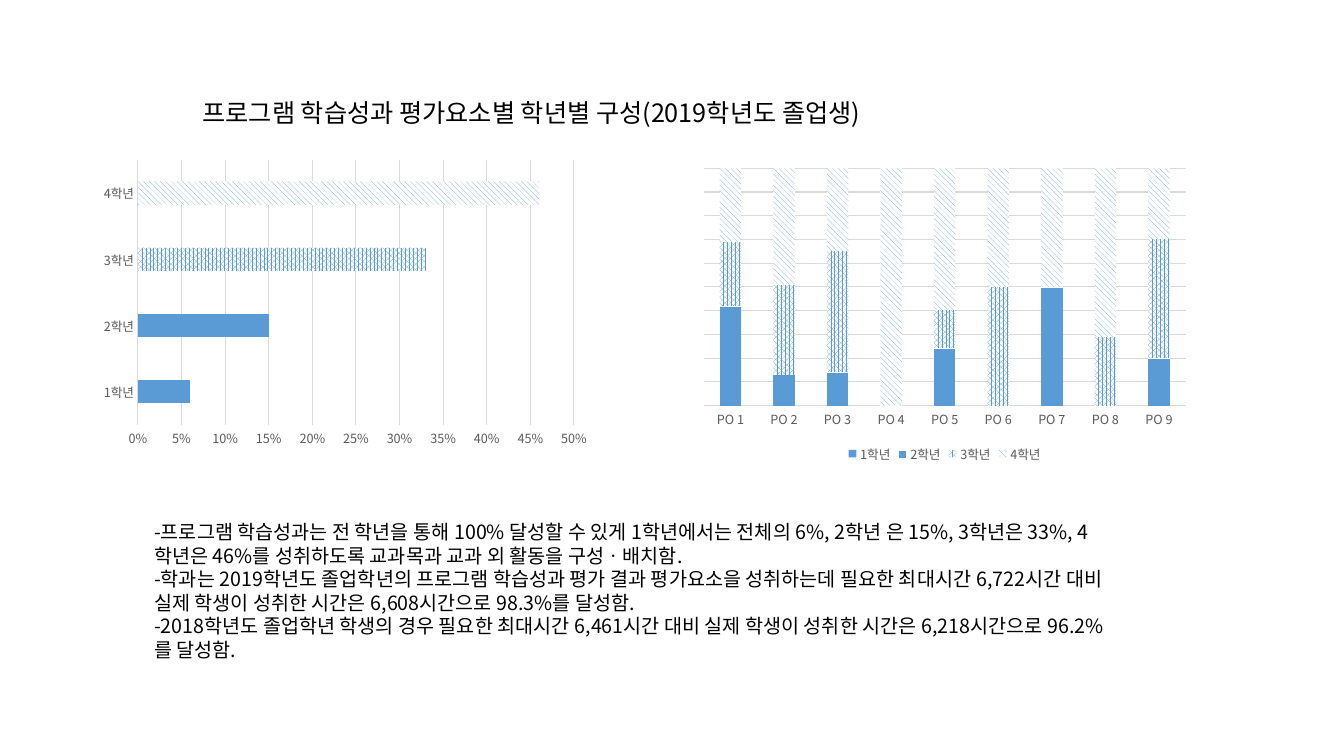
from lxml import etree
from pptx import Presentation
from pptx.chart.data import CategoryChartData
from pptx.dml.color import RGBColor
from pptx.enum.chart import XL_CHART_TYPE, XL_LEGEND_POSITION, XL_TICK_MARK
from pptx.enum.dml import MSO_PATTERN
from pptx.oxml.ns import qn
from pptx.util import Inches, Pt

BAR = XL_CHART_TYPE.BAR_CLUSTERED
STACKED = XL_CHART_TYPE.COLUMN_STACKED_100
BOTTOM = XL_LEGEND_POSITION.BOTTOM
NO_TICK = XL_TICK_MARK.NONE
YEAR_PATTERNS = [
    None,
    MSO_PATTERN.DARK_HORIZONTAL,
    MSO_PATTERN.PERCENT_75,
    MSO_PATTERN.WIDE_DOWNWARD_DIAGONAL,
]

FONT = "Noto Sans CJK KR"
COLORS = {
    "text": "000000",
    "label": "595959",
    "grid": "D9D9D9",
    "bar": "5B9BD5",
    "paper": "FFFFFF",
}
YEARS = ["1학년", "2학년", "3학년", "4학년"]
YEAR_SHARES = [0.06, 0.15, 0.33, 0.46]
OUTCOMES = [f"PO {number}" for number in range(1, 10)]
OUTCOME_SHARES = [
    [21] + [None] * 8,
    [21, 13, 14, None, 24, None, 50, None, 20],
    [27, 38, 51, None, 16, 50, None, 29, 50],
    [31, 49, 35, 100, 59, 50, 50, 71, 30],
]
TITLE = "프로그램 학습성과 평가요소별 학년별 구성(2019학년도 졸업생)"
FINDINGS = [
    "-프로그램 학습성과는 전 학년을 통해 100% 달성할 수 있게 1학년에서는 전체의 6%, "
    "2학년 은 15%, 3학년은 33%, 4학년은 46%를 성취하도록 교과목과 교과 외 활동을 구성ㆍ배치함.",
    "-학과는 2019학년도 졸업학년의 프로그램 학습성과 평가 결과 평가요소을 성취하는데 필요한 "
    "최대시간 6,722시간 대비 실제 학생이 성취한 시간은 6,608시간으로 98.3%를 달성함.",
    "-2018학년도 졸업학년 학생의 경우 필요한 최대시간 6,461시간 대비 실제 학생이 성취한 "
    "시간은 6,218시간으로 96.2%를 달성함.",
]


def color(name):
    """Return the named colour."""
    return RGBColor.from_string(COLORS[name])


def style_font(font, size, color_name):
    """Set size, colour and both the Latin and East Asian typefaces."""
    font.size = Pt(size)
    font.color.rgb = color(color_name)
    font.name = FONT
    latin = font._element.find(qn("a:latin"))
    east_asian = etree.Element(qn("a:ea"), typeface=FONT)
    latin.addnext(east_asian)


def style_line(line):
    """Draw a thin grey chart line."""
    line.color.rgb = color("grid")
    line.width = Pt(0.75)


def fill_year(fill, pattern):
    """Fill a bar with the solid or patterned look of its school year."""
    if pattern is None:
        fill.solid()
        fill.fore_color.rgb = color("bar")
    else:
        fill.patterned()
        fill.pattern = pattern
        fill.fore_color.rgb = color("bar")
        fill.back_color.rgb = color("paper")


def add_text(slide, box, paragraphs, size):
    """Write wrapped paragraphs into a box."""
    text_frame = slide.shapes.add_textbox(*map(Inches, box)).text_frame
    text_frame.word_wrap = True
    text_frame.text = "\n".join(paragraphs)
    for paragraph in text_frame.paragraphs:
        for run in paragraph.runs:
            style_font(run.font, size, "text")


def add_share_chart(slide, box, chart_type, categories, series, gap, maximum, step):
    """Place a bar or column chart with light gridlines and return it."""
    data = CategoryChartData()
    data.categories = categories
    for name, values in series:
        data.add_series(name, values)
    chart = slide.shapes.add_chart(chart_type, *map(Inches, box), data).chart
    chart.has_title = False
    chart.has_legend = False
    style_font(chart.font, 10, "text")
    plot = chart.plots[0]
    plot.gap_width = gap
    plot.vary_by_categories = False
    for axis in (chart.category_axis, chart.value_axis):
        axis.major_tick_mark = axis.minor_tick_mark = NO_TICK
        style_font(axis.tick_labels.font, 9, "label")
    style_line(chart.category_axis.format.line)
    value_axis = chart.value_axis
    value_axis.format.line.fill.background()
    value_axis.minimum_scale = 0
    value_axis.maximum_scale = maximum
    value_axis.major_unit = step
    value_axis.tick_labels.number_format = "0%"
    value_axis.tick_labels.number_format_is_linked = False
    style_line(value_axis.major_gridlines.format.line)
    return chart


def add_year_chart(slide, box):
    """Show the overall share of each school year."""
    series = [("Series 1", YEAR_SHARES)]
    chart = add_share_chart(slide, box, BAR, YEARS, series, 182, 0.5, 0.05)
    bars = chart.plots[0].series[0]
    fill_year(bars.format.fill, None)
    for index, pattern in enumerate(YEAR_PATTERNS):
        if pattern is not None:
            fill_year(bars.points[index].format.fill, pattern)


def add_outcome_chart(slide, box):
    """Show the school years that make up each programme outcome."""
    series = zip(YEARS, OUTCOME_SHARES)
    chart = add_share_chart(slide, box, STACKED, OUTCOMES, series, 150, 1, 0.1)
    chart.value_axis.visible = False
    chart.plots[0].overlap = 100
    for bars, pattern in zip(chart.plots[0].series, YEAR_PATTERNS):
        fill_year(bars.format.fill, pattern)
    chart.has_legend = True
    chart.legend.position = BOTTOM
    chart.legend.include_in_layout = False
    style_font(chart.legend.font, 9, "label")


def main():
    """Build and save the slide."""
    presentation = Presentation()
    presentation.slide_width = Inches(13.33)
    presentation.slide_height = Inches(7.5)
    slide = presentation.slides.add_slide(presentation.slide_layouts[6])
    add_year_chart(slide, (0.93, 1.53, 4.99, 2.96))
    add_outcome_chart(slide, (6.88, 1.61, 4.98, 3.02))
    add_text(slide, (1.91, 0.92, 8.95, 0.71), [TITLE], 18)
    add_text(slide, (1.43, 5.11, 9.75, 1.51), FINDINGS, 14)
    presentation.save("out.pptx")


if __name__ == "__main__":
    main()
